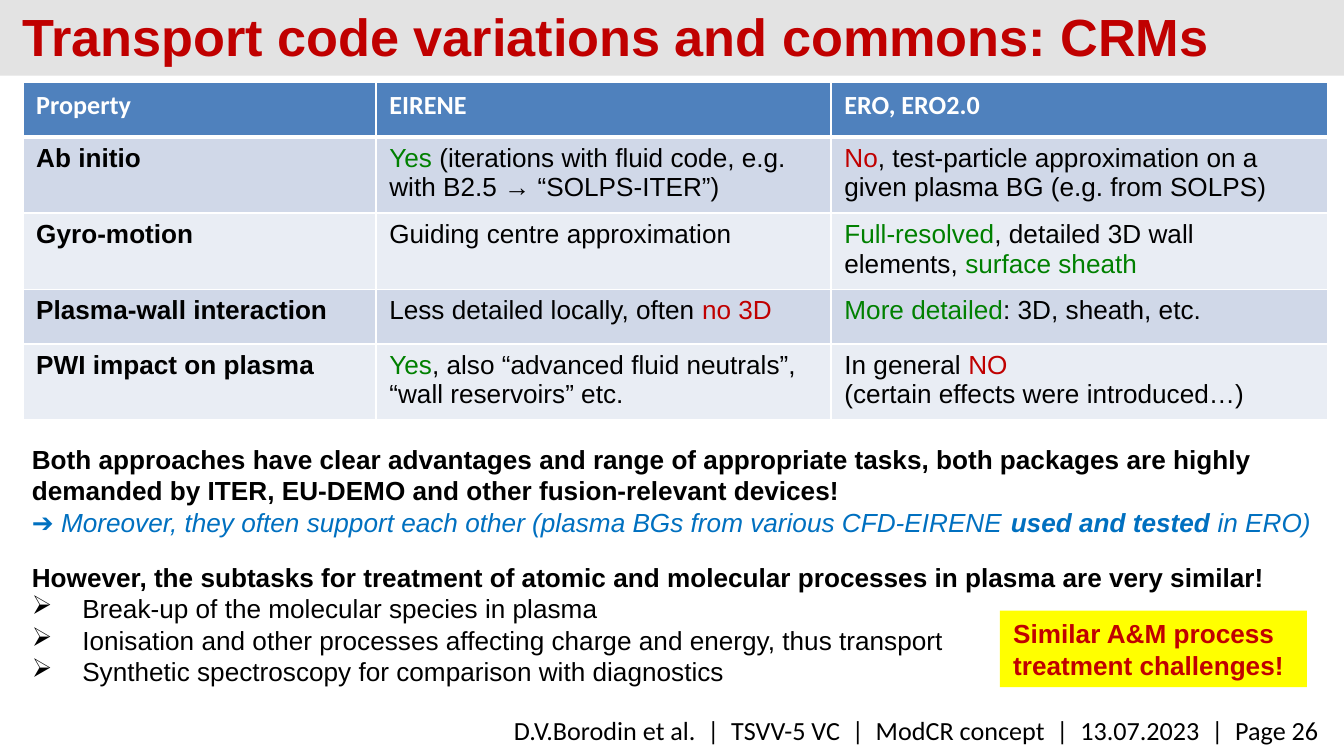
from dataclasses import dataclass

import pptx
import pptx.dml.color
import pptx.enum.shapes
import pptx.enum.text
import pptx.oxml.ns
import pptx.util
from lxml import etree

Pt = pptx.util.Pt
Align = pptx.enum.text.PP_ALIGN
Anchor = pptx.enum.text.MSO_ANCHOR


@dataclass(frozen=True)
class Theme:
    heading_font: str = "Calibri"
    body_font: str = "Arial"
    title_size: float = 28
    body_size: float = 14
    black: str = "000000"
    white: str = "FFFFFF"
    red: str = "C00000"
    green: str = "008000"
    blue: str = "0070C0"
    yellow: str = "FFFF00"
    banner: str = "E3E3E3"
    header: str = "4F81BD"
    bands: tuple[str, str] = ("D0D8E8", "E9EDF4")


THEME = Theme()


@dataclass(frozen=True)
class Span:
    text: str
    color: str = THEME.black
    bold: bool = False
    italic: bool = False
    font: str = THEME.body_font
    size: float = THEME.body_size


@dataclass(frozen=True)
class Line:
    spans: tuple[Span, ...]
    bullet: str = ""
    space_before: float = 0
    align: Align = Align.LEFT


@dataclass(frozen=True)
class Box:
    left: float
    top: float
    width: float
    height: float

    def lengths(self) -> tuple[pptx.util.Length, ...]:
        return Pt(self.left), Pt(self.top), Pt(self.width), Pt(self.height)


def line(*spans: Span, **options) -> Line:
    return Line(spans, **options)


def bold(text: str, color: str = THEME.black) -> Span:
    return Span(text, color, bold=True)


def good(text: str) -> Span:
    return Span(text, THEME.green)


def bad(text: str) -> Span:
    return Span(text, THEME.red)


def heading(text: str) -> Span:
    return Span(text, THEME.white, bold=True, font=THEME.heading_font)


def rgb(color: str) -> pptx.dml.color.RGBColor:
    return pptx.dml.color.RGBColor.from_string(color)


def add_bullet(paragraph, character: str, indent: float) -> None:
    properties = paragraph._p.get_or_add_pPr()
    properties.set("marL", str(Pt(indent)))
    properties.set("indent", str(-Pt(indent)))
    bullet = etree.SubElement(properties, pptx.oxml.ns.qn("a:buChar"))
    bullet.set("char", character)


def write(text_frame, lines: list[Line]) -> None:
    text_frame.word_wrap = True
    text_frame.text = "\n".join("" for _ in lines)
    for paragraph, content in zip(text_frame.paragraphs, lines):
        paragraph.alignment = content.align
        if content.space_before:
            paragraph.space_before = Pt(content.space_before)
        if content.bullet:
            add_bullet(paragraph, content.bullet, 27)
        for span in content.spans:
            run = paragraph.add_run()
            run.text = span.text
            run.font.name, run.font.size = span.font, Pt(span.size)
            run.font.bold, run.font.italic = span.bold, span.italic
            run.font.color.rgb = rgb(span.color)


def add_text(slide, box: Box, lines: list[Line]):
    text_frame = slide.shapes.add_textbox(*box.lengths()).text_frame
    write(text_frame, lines)
    return text_frame


def add_rectangle(slide, box: Box, color: str):
    shape = slide.shapes.add_shape(pptx.enum.shapes.MSO_SHAPE.RECTANGLE, *box.lengths())
    shape.shadow.inherit = False
    shape.fill.solid()
    shape.fill.fore_color.rgb = rgb(color)
    shape.line.fill.background()
    return shape


def set_borders(cell, bottom_width: float) -> None:
    """Draw white borders; they must precede the fill in the cell properties."""
    properties = cell._tc.get_or_add_tcPr()
    widths = {"lnL": 1, "lnR": 1, "lnT": 1, "lnB": bottom_width}
    for position, (side, width) in enumerate(widths.items()):
        border = etree.Element(pptx.oxml.ns.qn(f"a:{side}"), w=str(Pt(width)))
        fill = etree.SubElement(border, pptx.oxml.ns.qn("a:solidFill"))
        etree.SubElement(fill, pptx.oxml.ns.qn("a:srgbClr"), val=THEME.white)
        properties.insert(position, border)


def add_comparison(slide, box: Box, widths: list[float], rows: list[list[list[Line]]]) -> None:
    table = slide.shapes.add_table(len(rows), len(widths), *box.lengths()).table
    for column, width in zip(table.columns, widths):
        column.width = Pt(width)
    for row_index, row in enumerate(rows):
        color = THEME.bands[(row_index - 1) % 2] if row_index else THEME.header
        for column_index, lines in enumerate(row):
            cell = table.cell(row_index, column_index)
            cell.fill.solid()
            cell.fill.fore_color.rgb = rgb(color)
            set_borders(cell, 1 if row_index else 3)
            write(cell.text_frame, lines)


COMPARISON = [
    [[line(heading(name))] for name in ("Property", "EIRENE", "ERO, ERO2.0")],
    [[line(bold("Ab initio"))],
     [line(good("Yes "), Span("(iterations with fluid code, e.g. with B2.5 → “SOLPS-ITER”)"))],
     [line(bad("No"), Span(", test-particle approximation on a given plasma BG (e.g. from SOLPS)"))]],
    [[line(bold("Gyro-motion"))],
     [line(Span("Guiding centre approximation"))],
     [line(good("Full-resolved"), Span(", detailed 3D wall elements, "), good("surface sheath"))]],
    [[line(bold("Plasma-wall interaction"))],
     [line(Span("Less detailed locally, often "), bad("no 3D"))],
     [line(good("More detailed"), Span(": 3D, sheath, etc."))]],
    [[line(bold("PWI impact on plasma"))],
     [line(good("Yes"), Span(", also “advanced fluid neutrals”, “wall reservoirs” etc."))],
     [line(Span("In general "), bad("NO")), line(Span("(certain effects were introduced…)"))]],
]

SUBTASKS = [
    "Break-up of the molecular species in plasma",
    "Ionisation and other processes affecting charge and energy, thus transport",
    "Synthetic spectroscopy for comparison with diagnostics",
]

CONCLUSIONS = [
    line(bold("Both approaches have clear advantages and range of appropriate tasks, both packages "
              "are highly demanded by ITER, EU-DEMO and other fusion-relevant devices!")),
    line(Span("➔ Moreover, they often support each other (plasma BGs from various CFD-EIRENE ",
              THEME.blue, italic=True),
         Span("used and tested", THEME.blue, bold=True, italic=True),
         Span(" in ERO)", THEME.blue, italic=True)),
    line(bold("However, the subtasks for treatment of atomic and molecular processes in plasma "
              "are very similar!"), space_before=12.8),
    *(line(Span(subtask), bullet="➢") for subtask in SUBTASKS),
]


def main() -> None:
    presentation = pptx.Presentation()
    presentation.slide_width, presentation.slide_height = Pt(720), Pt(405)
    slide = presentation.slides.add_slide(presentation.slide_layouts[6])

    add_rectangle(slide, Box(0, 0, 720, 40.5), THEME.banner)
    footer = "D.V.Borodin et al.  |  TSVV-5 VC  |  ModCR concept  |  13.07.2023  |  Page 26"
    add_text(slide, Box(139, 379, 575, 24.2),
             [line(Span(footer, font=THEME.heading_font), align=Align.RIGHT)])
    title = Span("Transport code variations and commons: CRMs", THEME.red, bold=True,
                 size=THEME.title_size)
    title_frame = add_text(slide, Box(12, 5.8, 648, 26), [line(title)])
    title_frame.margin_left = title_frame.margin_right = 0
    title_frame.margin_top = title_frame.margin_bottom = 0
    title_frame.vertical_anchor = Anchor.MIDDLE

    add_comparison(slide, Box(12.2, 44.2, 699.2, 146), [189.2, 243.8, 266.2], COMPARISON)
    add_text(slide, Box(10, 234, 700.5, 143.3), CONCLUSIONS)

    callout = add_rectangle(slide, Box(535.7, 327.2, 164.5, 41), THEME.yellow)
    write(callout.text_frame, [line(bold("Similar A&M process treatment challenges!", THEME.red))])

    presentation.save("out.pptx")


if __name__ == "__main__":
    main()
